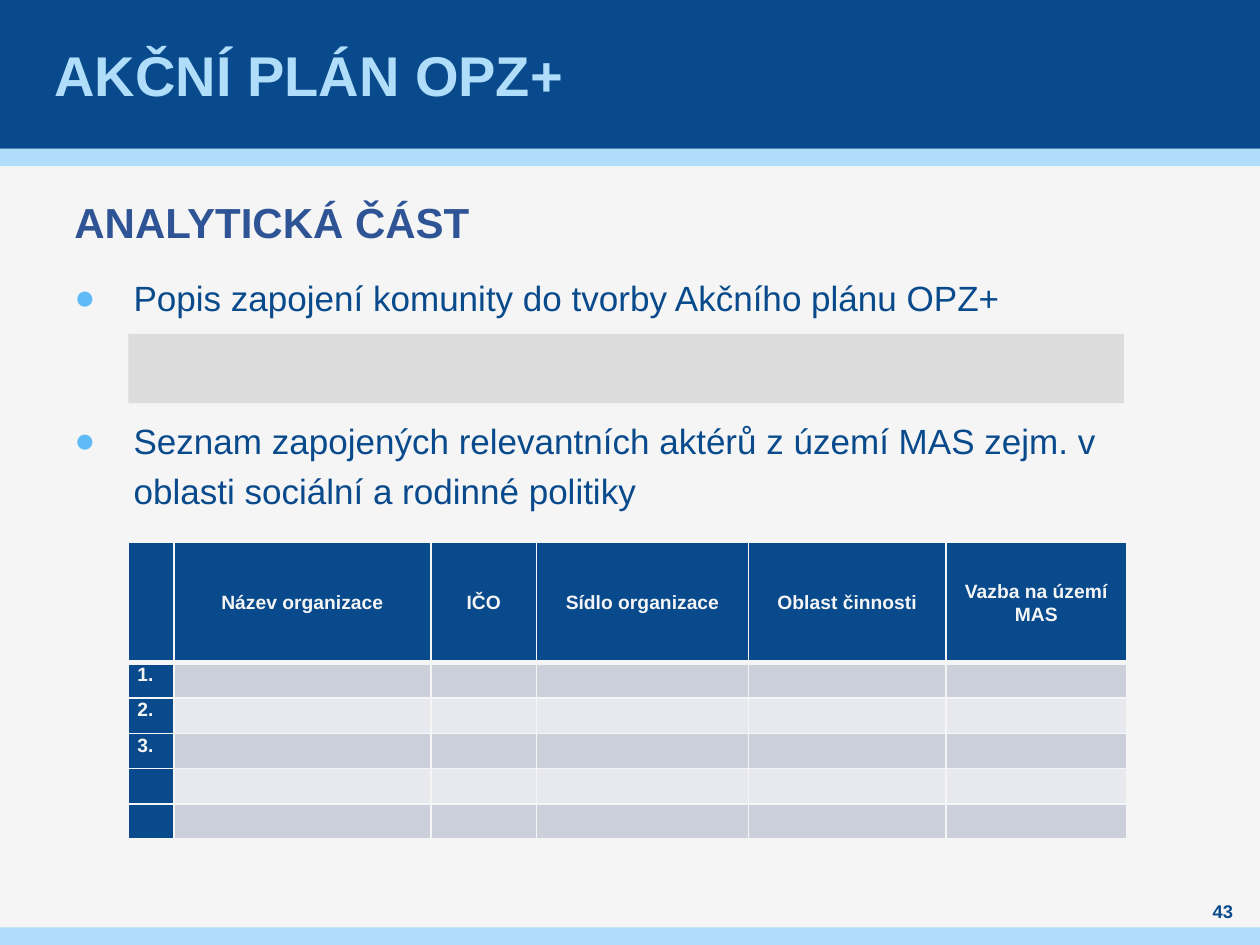
from lxml.etree import SubElement
from pptx import Presentation
from pptx.dml.color import RGBColor
from pptx.enum.shapes import MSO_SHAPE
from pptx.enum.text import MSO_ANCHOR, MSO_AUTO_SIZE, PP_ALIGN
from pptx.oxml.ns import qn
from pptx.util import Inches, Pt

NAVY, SKY, PALE = "084A8B", "AFDDFA", "F5F5F5"
HEADS = ["", "Název organizace", "IČO", "Sídlo organizace",
         "Oblast činnosti", "Vazba na území MAS"]
MARKS = ["1.", "2.", "3.", "", ""]
WIDTHS = [0.36, 2.04, 0.84, 1.68, 1.57, 1.43]
BULLETS = ["Popis zapojení komunity do tvorby Akčního plánu OPZ+",
           "Seznam zapojených relevantních aktérů z území MAS zejm. v "
           "oblasti sociální a rodinné politiky"]


def paint(fill, color):
    fill.solid()
    fill.fore_color.rgb = RGBColor.from_string(color)


def style(para, size, color, bold=True):
    font = para.font
    font.name, font.size, font.bold = "Arial", Pt(size), bold
    font.color.rgb = RGBColor.from_string(color)


def place(shape, box):
    shape.left, shape.top, shape.width, shape.height = map(Inches, box)


def inset(frame, side):
    frame.margin_left = frame.margin_right = Inches(side)
    frame.margin_top = frame.margin_bottom = 0


def setup(frame, side, anchor):
    frame.word_wrap = True
    frame.auto_size = MSO_AUTO_SIZE.NONE
    frame.vertical_anchor = anchor
    inset(frame, side)


def add_bar(slide, box, color):
    bar = slide.shapes.add_shape(MSO_SHAPE.RECTANGLE, *map(Inches, box))
    paint(bar.fill, color)
    bar.line.fill.background()
    bar.shadow.inherit = False
    return bar


def add_frame(slide, wide, high):
    head, strip = 1.18, 0.14
    bars = [((0, head, wide, strip), SKY), ((0, 0, wide, head), NAVY),
            ((0, high - strip, wide, strip), SKY)]
    for spot, (box, color) in enumerate(bars, 2):
        slide.shapes.element.insert(spot, add_bar(slide, box, color).element)


def add_title(slide, box):
    title = slide.shapes.title
    place(title, box)
    setup(title.text_frame, 0.04, MSO_ANCHOR.MIDDLE)
    title.text_frame.text = "AKČNÍ PLÁN OPZ+"
    para = title.text_frame.paragraphs[0]
    para.alignment = PP_ALIGN.LEFT
    style(para, 32, SKY)


def set_bullet(para, char=None):
    props = para._p.get_or_add_pPr()
    step = Inches(0.47) if char else 0
    props.set("marL", str(step))
    props.set("indent", str(-step))
    if char:
        tint = SubElement(props, qn("a:buClr"))
        SubElement(tint, qn("a:srgbClr"), val="5FBBF5")
        SubElement(props, qn("a:buFont"), typeface="Arial")
        SubElement(props, qn("a:buChar"), char=char)
    else:
        SubElement(props, qn("a:buNone"))


def add_body(slide, box):
    body = slide.placeholders[1]
    place(body, box)
    frame = body.text_frame
    setup(frame, 0, MSO_ANCHOR.TOP)
    frame.text = "\n".join(["ANALYTICKÁ ČÁST", *BULLETS])
    head, *items = frame.paragraphs
    set_bullet(head)
    style(head, 24, "2F5496")
    for para in items:
        set_bullet(para, "●")
        style(para, 20, NAVY, False)
    for para in frame.paragraphs:
        para.line_spacing = Pt(28.8)
        para.space_before = para.space_after = Pt(6)
    items[-1].space_before = Pt(46.8)


def set_edges(cell, base):
    props = cell._tc.get_or_add_tcPr()
    for side in "LRTB":
        width = base if side == "B" else 1
        line = SubElement(props, qn(f"a:ln{side}"), w=str(Pt(width)))
        fill = SubElement(line, qn("a:solidFill"))
        SubElement(fill, qn("a:srgbClr"), val=PALE)


def add_grid(slide, box):
    rows = [HEADS] + [[mark] + [""] * (len(HEADS) - 1) for mark in MARKS]
    grid = slide.shapes.add_table(len(rows), len(HEADS), *map(Inches, box)).table
    for col, width in zip(grid.columns, WIDTHS):
        col.width = Inches(width)
    for r, row in enumerate(rows):
        grid.rows[r].height = Inches(0.28 if r else 0.96)
        for c, text in enumerate(row):
            cell = grid.cell(r, c)
            set_edges(cell, 1 if r else 3)
            band = "CCD0DA" if r % 2 else "E7E9EE"
            paint(cell.fill, band if r and c else NAVY)
            inset(cell, 0.07)
            cell.vertical_anchor = MSO_ANCHOR.TOP if r else MSO_ANCHOR.MIDDLE
            cell.text = text
            para = cell.text_frame.paragraphs[0]
            para.alignment = PP_ALIGN.LEFT if r else PP_ALIGN.CENTER
            para.line_spacing = 1.07
            para.space_after = Pt(8)
            style(para, 11, PALE)


def add_page(slide, box):
    frame = slide.shapes.add_textbox(*map(Inches, box)).text_frame
    setup(frame, 0, MSO_ANCHOR.MIDDLE)
    frame.text = "43"
    para = frame.paragraphs[0]
    para.alignment = PP_ALIGN.CENTER
    style(para, 10.5, NAVY)


def main():
    deck = Presentation()
    deck.slide_width, deck.slide_height = Inches(10), Inches(7.5)
    slide = deck.slides.add_slide(deck.slide_layouts[1])
    paint(slide.background.fill, PALE)
    add_frame(slide, 10, 7.5)
    add_title(slide, (0.39, 0, 9.21, 1.18))
    add_body(slide, (0.59, 1.56, 8.82, 5.23))
    add_page(slide, (9.45, 7.13, 0.51, 0.2))
    add_grid(slide, (1.02, 4.3, sum(WIDTHS), 2.36))
    add_bar(slide, (1.02, 2.65, 7.9, 0.55), "DCDCDC")
    deck.save("out.pptx")


if __name__ == "__main__":
    main()
